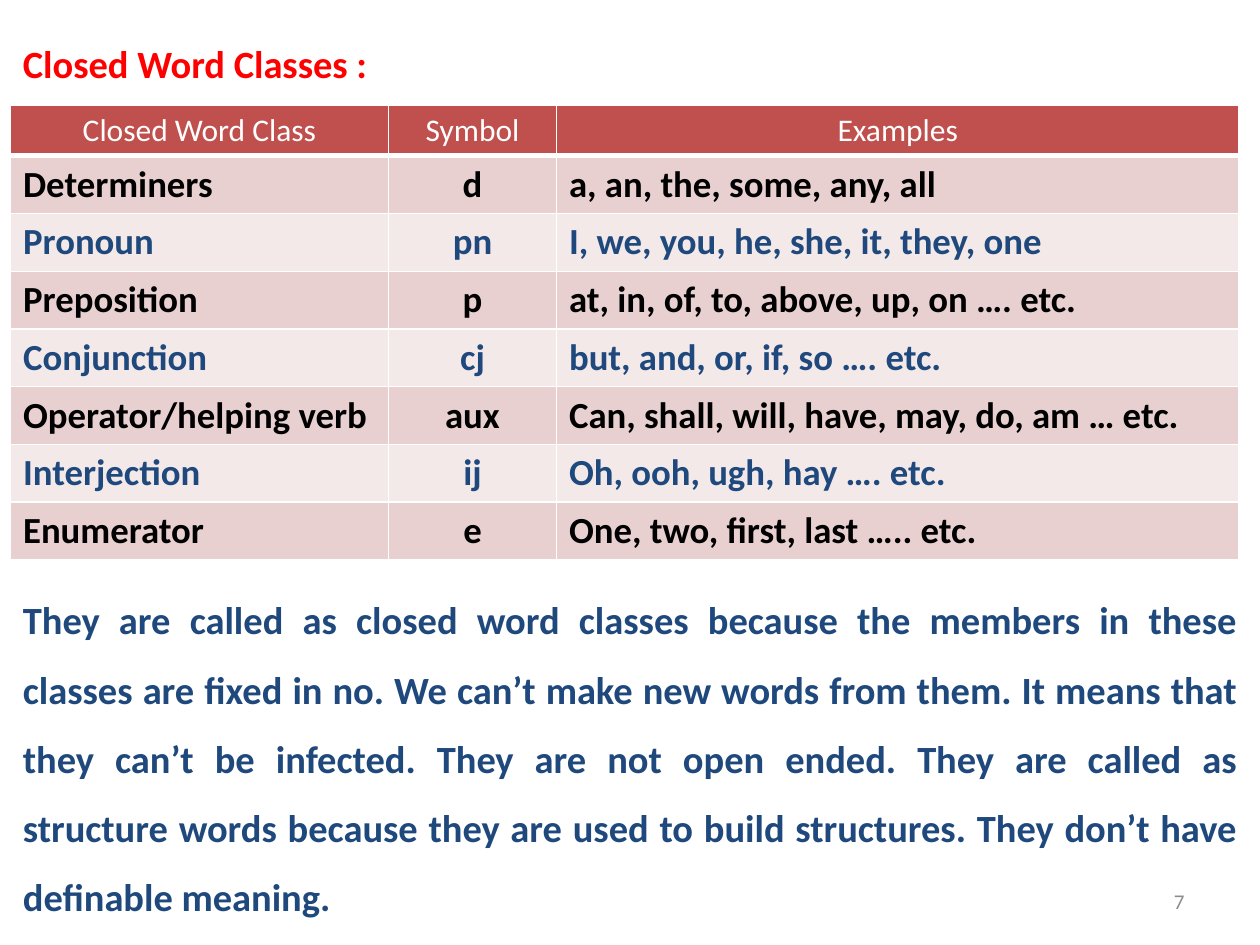
import dataclasses

import lxml.etree
import pptx
import pptx.dml.color
import pptx.enum.text
import pptx.oxml.ns
import pptx.util

Pt = pptx.util.Pt
ALIGN = pptx.enum.text.PP_ALIGN
ANCHOR = pptx.enum.text.MSO_ANCHOR


@dataclasses.dataclass(frozen=True)
class Theme:
    """Colours, font and type sizes of the slide."""
    font: str = "Calibri"
    heading: str = "FF0000"
    navy: str = "1F497D"
    black: str = "000000"
    white: str = "FFFFFF"
    grey: str = "8C8C8C"
    header_fill: str = "C0504D"
    odd_fill: str = "E8D0D0"
    even_fill: str = "F4E9E9"
    body_size: float = 22
    row_size: float = 21
    header_size: float = 18
    number_size: float = 12


THEME = Theme()

COLUMN_WIDTHS = (216, 96, 390)
HEADER_HEIGHT = 29
ROW_HEIGHT = 33
WORD_CLASSES = (
    ("Closed Word Class", "Symbol", "Examples"),
    ("Determiners", "d", "a, an, the, some, any, all"),
    ("Pronoun", "pn", "I, we, you, he, she, it, they, one"),
    ("Preposition", "p", "at, in, of, to, above, up, on …. etc."),
    ("Conjunction", "cj", "but, and, or, if, so …. etc."),
    ("Operator/helping verb", "aux", "Can, shall, will, have, may, do, am … etc."),
    ("Interjection", "ij", "Oh, ooh, ugh, hay …. etc."),
    ("Enumerator", "e", "One, two, first, last ….. etc."),
)
EXPLANATION = (
    "They are called as closed word classes because the members in these classes "
    "are fixed in no. We can’t make new words from them. It means that they can’t "
    "be infected. They are not open ended. They are called as structure words "
    "because they are used to build structures. They don’t have definable meaning."
)


def rgb(colour):
    """Turn a hex string into a colour."""
    return pptx.dml.color.RGBColor.from_string(colour)


def write(text_frame, text, size, colour, bold=False, align=ALIGN.LEFT):
    """Set one formatted paragraph in a text frame and return it."""
    text_frame.text = text
    paragraph = text_frame.paragraphs[0]
    paragraph.alignment = align
    font = paragraph.runs[0].font
    font.name, font.size, font.bold = THEME.font, Pt(size), bold
    font.color.rgb = rgb(colour)
    return paragraph


def add_frame(slide, box):
    """Add a wrapping text box and return its text frame."""
    frame = slide.shapes.add_textbox(*map(Pt, box)).text_frame
    frame.word_wrap = True
    return frame


def add_heading(slide, box):
    """Place the heading at the top of its box."""
    heading = write(add_frame(slide, box), "Closed Word Classes :",
                    THEME.body_size, THEME.heading, True, ALIGN.JUSTIFY)
    heading.line_spacing = 1.5
    heading.space_before = Pt(4.4)


def add_slide_number(slide, box):
    """Place the slide number at the right of its box."""
    frame = add_frame(slide, box)
    frame.vertical_anchor = ANCHOR.MIDDLE
    write(frame, "7", THEME.number_size, THEME.grey, align=ALIGN.RIGHT)


def add_explanation(slide, box):
    """Place the justified explanation below the table."""
    explanation = write(add_frame(slide, box), EXPLANATION,
                        THEME.body_size, THEME.navy, True, ALIGN.JUSTIFY)
    explanation.line_spacing = 1.5


def set_borders(cell, **widths):
    """Draw white cell borders of the given widths, keyed by side."""
    properties = cell._tc.get_or_add_tcPr()
    for position, (side, width) in enumerate(widths.items()):
        line = lxml.etree.Element(pptx.oxml.ns.qn(f"a:ln{side}"), w=str(Pt(width)))
        fill = lxml.etree.SubElement(line, pptx.oxml.ns.qn("a:solidFill"))
        lxml.etree.SubElement(fill, pptx.oxml.ns.qn("a:srgbClr"), val=THEME.white)
        properties.insert(position, line)


def row_style(row):
    """Return fill, text colour and text size of a table row."""
    if row == 0:
        return THEME.header_fill, THEME.white, THEME.header_size
    if row % 2:
        return THEME.odd_fill, THEME.black, THEME.row_size
    return THEME.even_fill, THEME.navy, THEME.row_size


def add_word_classes(slide, box):
    """Place the table of closed word classes."""
    table = slide.shapes.add_table(
        len(WORD_CLASSES), len(COLUMN_WIDTHS), *map(Pt, box)).table
    for column, width in zip(table.columns, COLUMN_WIDTHS):
        column.width = Pt(width)
    for row, entries in enumerate(WORD_CLASSES):
        table.rows[row].height = Pt(ROW_HEIGHT if row else HEADER_HEIGHT)
        fill, colour, size = row_style(row)
        for column, entry in enumerate(entries):
            cell = table.cell(row, column)
            cell.fill.solid()
            cell.fill.fore_color.rgb = rgb(fill)
            centred = row == 0 or column == 1
            write(cell.text_frame, entry, size, colour, row > 0,
                  ALIGN.CENTER if centred else ALIGN.LEFT)
            set_borders(cell, L=1, R=1, T=3 if row == 1 else 1, B=1 if row else 3)


def main():
    """Build the slide and save it."""
    deck = pptx.Presentation()
    deck.slide_width, deck.slide_height = Pt(720), Pt(540)
    slide = deck.slides.add_slide(deck.slide_layouts[6])
    table_height = HEADER_HEIGHT + ROW_HEIGHT * (len(WORD_CLASSES) - 1)
    add_heading(slide, (6, 6, 702, 522))
    add_slide_number(slide, (516, 500.5, 168, 28.75))
    add_word_classes(slide, (6, 60, sum(COLUMN_WIDTHS), table_height))
    add_explanation(slide, (6, 324, 708, 207))
    deck.save("out.pptx")


if __name__ == "__main__":
    main()
